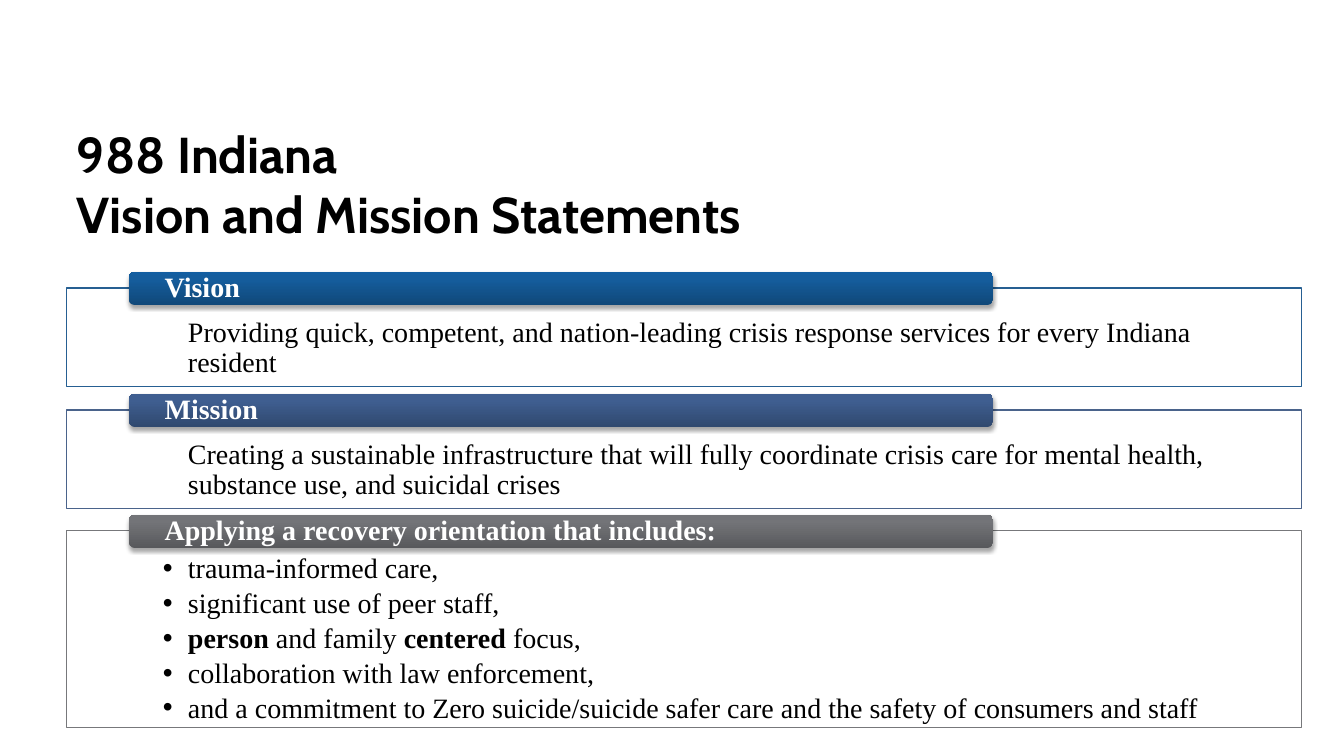
import pptx
import pptx.dml.color
import pptx.enum.shapes
import pptx.enum.text
import pptx.oxml
import pptx.oxml.ns
import pptx.util

EMU_PER_PX = 914400 / 100.8
SERIF = "Times New Roman"
RECT = pptx.enum.shapes.MSO_SHAPE.RECTANGLE
ROUNDED = pptx.enum.shapes.MSO_SHAPE.ROUNDED_RECTANGLE
TOP = pptx.enum.text.MSO_ANCHOR.TOP
MIDDLE = pptx.enum.text.MSO_ANCHOR.MIDDLE

# Each paragraph is a list of (text, bold) spans
VISION = [[("Providing quick, competent, and nation-leading crisis response "
            "services for every Indiana resident", False)]]
MISSION = [[("Creating a sustainable infrastructure that will fully coordinate crisis "
             "care for mental health, substance use, and suicidal crises", False)]]
RECOVERY = [
    [("trauma-informed care,", False)],
    [("significant use of peer staff,", False)],
    [("person", True), (" and family ", False), ("centered", True), (" focus,", False)],
    [("collaboration with law enforcement,", False)],
    [("and a commitment to Zero suicide/suicide safer care and the safety of "
      "consumers and staff", False)],
]

# Heading, top, height, outline, gradient from bottom to top, paragraphs, bulleted
SECTIONS = [
    ("Vision", 288, 99, "265F92", ("104879", "155D9D", "135EA1"), VISION, False),
    ("Mission", 410, 99, "4A638B", ("30496F", "3F5E90", "3D5E92"), MISSION, False),
    ("Applying a recovery orientation that includes:", 531, 197, "77787B",
     ("58595C", "737478", "737478"), RECOVERY, True),
]


def px(length):
    return pptx.util.Emu(round(length * EMU_PER_PX))


def color(value):
    return pptx.dml.color.RGBColor.from_string(value)


def xml(tag, content="", **attributes):
    listed = "".join(f' {name}="{value}"' for name, value in attributes.items())
    namespace = pptx.oxml.ns.nsdecls("a")
    return pptx.oxml.parse_xml(f"<a:{tag} {namespace}{listed}>{content}</a:{tag}>")


def set_frame(box, left, top, right, bottom, anchor):
    frame = box.text_frame
    frame.word_wrap = True
    frame.vertical_anchor = anchor
    frame.margin_left, frame.margin_top = px(left), px(top)
    frame.margin_right, frame.margin_bottom = px(right), px(bottom)
    return frame


def set_font(para, name, size, value, bold=None):
    para.alignment = pptx.enum.text.PP_ALIGN.LEFT
    para.font.name = name
    para.font.size = pptx.util.Pt(size)
    para.font.color.rgb = color(value)
    para.font.bold = bold


def add_title(page, left, top, width, height):
    box = page.shapes.add_textbox(px(left), px(top), px(width), px(height))
    frame = set_frame(box, 10, 5, 10, 5, TOP)
    frame.text = "988 Indiana\nVision and Mission Statements"
    for para in frame.paragraphs:
        set_font(para, "Cabin", 36, "000000", True)


def add_panel(page, left, top, width, height, outline, paragraphs, bulleted):
    box = page.shapes.add_shape(RECT, px(left), px(top), px(width), px(height))
    box.shadow.inherit = False
    box.fill.solid()
    box.fill.fore_color.rgb = color("FFFFFF")
    box.element.spPr.find(".//" + pptx.oxml.ns.qn("a:srgbClr")).append(
        xml("alpha", val=90000))
    box.line.color.rgb = color(outline)
    box.line.width = pptx.util.Pt(0.75)

    frame = set_frame(box, 96, 20 if bulleted else 30, 96, 5, TOP)
    for index, spans in enumerate(paragraphs):
        para = frame.add_paragraph() if index else frame.paragraphs[0]
        properties = para._p.get_or_add_pPr()
        properties.set("marL", str(px(25)))
        properties.set("indent", str(px(-25) if bulleted else 0))
        if bulleted:
            properties.append(xml("buFont", typeface="Arial"))
            properties.append(xml("buChar", char="•"))
            if index:
                para.space_before = pptx.util.Pt(0.9)
        else:
            para.line_spacing = 0.9
        set_font(para, SERIF, 20, "000000")
        for text, bold in spans:
            span = para.add_run()
            span.text = text
            span.font.bold = bold


def add_heading(page, left, top, width, height, text, gradient):
    bar = page.shapes.add_shape(ROUNDED, px(left), px(top), px(width), px(height))
    bar.line.fill.background()
    bar.fill.background()

    # Three-stop gradient and soft shadow
    stops = "".join(f'<a:gs pos="{place}"><a:srgbClr val="{value}"/></a:gs>'
                    for place, value in zip((0, 80000, 100000), gradient))
    shape_properties = bar.element.spPr
    shape_properties.replace(
        shape_properties.find(pptx.oxml.ns.qn("a:noFill")),
        xml("gradFill", f'<a:gsLst>{stops}</a:gsLst><a:lin ang="16200000" scaled="0"/>'))
    bar.shadow.inherit = False
    shape_properties.find(pptx.oxml.ns.qn("a:effectLst")).append(
        xml("outerShdw", '<a:srgbClr val="000000"><a:alpha val="35000"/></a:srgbClr>',
            blurRad=pptx.util.Pt(3.1), dist=pptx.util.Pt(1.8), dir=5400000,
            rotWithShape=0))

    para = set_frame(bar, 34, 0, 34, 0, MIDDLE).paragraphs[0]
    para.text = text
    para.line_spacing = 0.9
    set_font(para, SERIF, 20, "FFFFFF", True)


def add_section(page, left, width, section):
    heading, top, height, outline, gradient, paragraphs, bulleted = section
    add_panel(page, left, top, width, height, outline, paragraphs, bulleted)
    add_heading(page, left + 62, top - 16, 864, 33, heading, gradient)


def main():
    deck = pptx.Presentation()
    deck.slide_width, deck.slide_height = px(1344), px(756)
    page = deck.slides.add_slide(deck.slide_layouts[6])
    for section in SECTIONS:
        add_section(page, 67, 1235, section)
    add_title(page, 67, 118, 1033, 132)
    deck.save("out.pptx")


if __name__ == "__main__":
    main()
